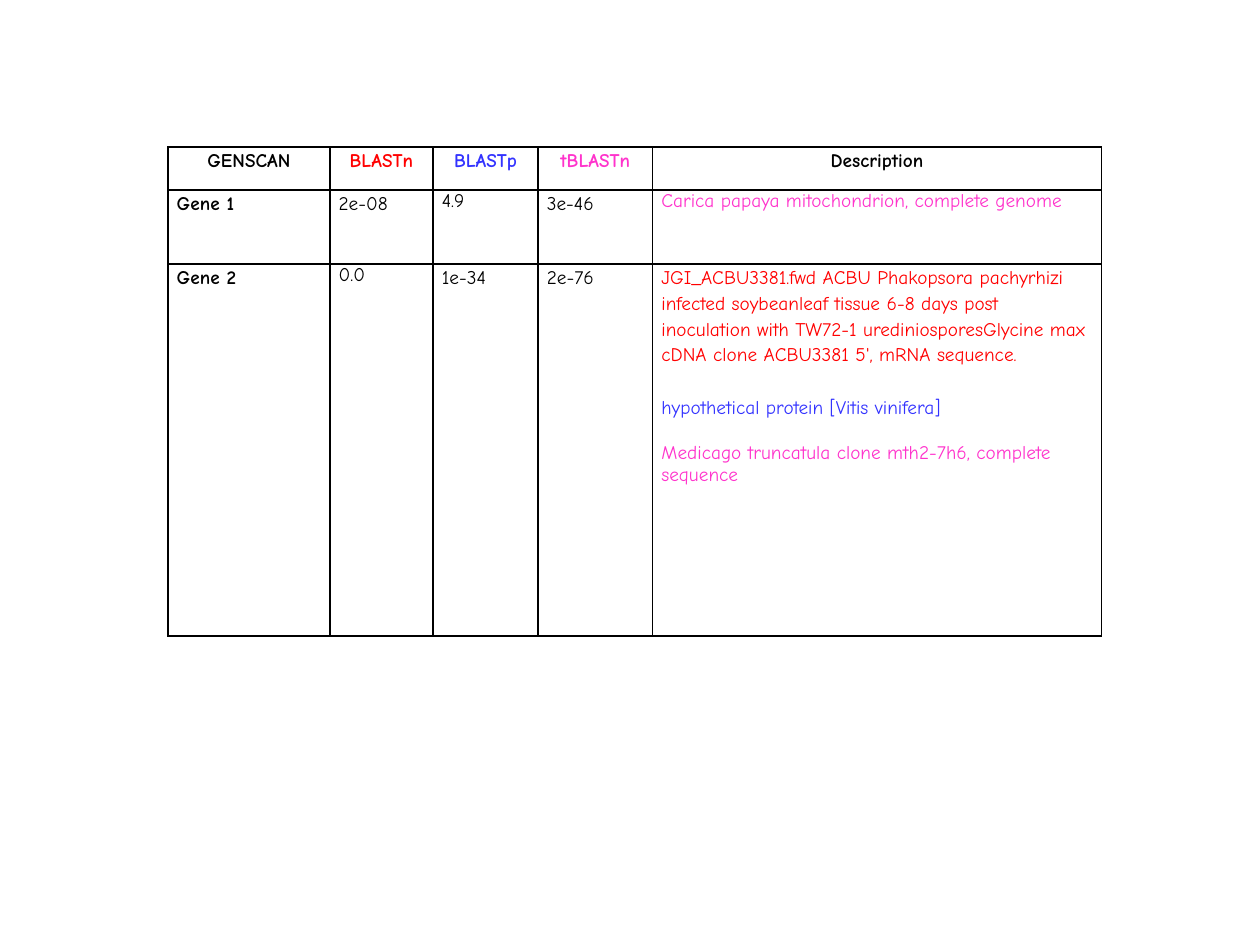
from pptx import Presentation
from pptx.dml.color import RGBColor
from pptx.enum import text as t
from pptx.oxml import parse_xml
from pptx.oxml import ns
from pptx.util import Pt

BLACK = RGBColor(0x00, 0x00, 0x00)
RED = RGBColor(0xFF, 0x00, 0x00)
BLUE = RGBColor(0x33, 0x33, 0xFF)
PINK = RGBColor(0xFF, 0x33, 0xCC)
FONT = "Comic Neue"

# Content: each cell is a list of (text, format) paragraphs
LOOSE = 1.15
HEADERS = [("GENSCAN", BLACK), ("BLASTn", RED), ("BLASTp", BLUE),
           ("tBLASTn", PINK), ("Description", BLACK)]
GENE_ROWS = [
    [
        [("Gene 1", dict(bold=True, spacing=LOOSE))],
        [("2e-08", dict(spacing=LOOSE))],
        [("4.9", {})],
        [("3e-46", dict(spacing=LOOSE))],
        [("Carica papaya mitochondrion, complete genome", dict(color=PINK))],
    ],
    [
        [("Gene 2", dict(bold=True, spacing=LOOSE))],
        [("0.0", {})],
        [("1e-34", dict(spacing=LOOSE))],
        [("2e-76", dict(spacing=LOOSE))],
        [
            ("JGI_ACBU3381.fwd ACBU Phakopsora pachyrhizi infected soybeanleaf "
             "tissue 6-8 days post inoculation with TW72-1 "
             "urediniosporesGlycine max cDNA clone ACBU3381 5', mRNA sequence.",
             dict(color=RED, spacing=LOOSE)),
            ("hypothetical protein [Vitis vinifera]",
             dict(color=BLUE, spacing=LOOSE, before=15.5)),
            ("Medicago truncatula clone mth2-7h6, complete sequence",
             dict(color=PINK, before=13)),
        ],
    ],
]
header_row = [
    [(label, dict(color=color, bold=True, spacing=LOOSE, align=t.PP_ALIGN.CENTER))]
    for label, color in HEADERS
]
ROWS = [header_row] + GENE_ROWS

# Table geometry in points
LEFT, TOP = 96, 84
COLUMN_WIDTHS = [92.5, 59, 60, 65.5, 256.5]
ROW_HEIGHTS = [24.5, 42.5, 212.5]


def write_paragraph(paragraph, content, color=BLACK, bold=False, spacing=1.0,
                    before=0, align=t.PP_ALIGN.LEFT):
    paragraph.alignment = align
    paragraph.line_spacing = spacing
    paragraph.space_before = Pt(before)
    run = paragraph.add_run()
    run.text = content
    run.font.name = FONT
    run.font.size = Pt(11)
    run.font.bold = bold
    run.font.color.rgb = color


def add_borders(cell):
    properties = cell._tc.get_or_add_tcPr()
    for index, side in enumerate(("lnL", "lnR", "lnT", "lnB")):
        border = parse_xml(
            f'<a:{side} {ns.nsdecls("a")} w="{Pt(1)}"><a:solidFill>'
            f'<a:srgbClr val="{BLACK}"/></a:solidFill></a:{side}>')
        properties.insert(index, border)


def fill_cell(cell, paragraphs):
    cell.margin_left = cell.margin_right = Pt(5)
    cell.margin_top = cell.margin_bottom = 0
    cell.vertical_anchor = t.MSO_ANCHOR.TOP
    cell.fill.background()
    add_borders(cell)
    frame = cell.text_frame
    for index, (content, style) in enumerate(paragraphs):
        paragraph = frame.add_paragraph() if index else frame.paragraphs[0]
        write_paragraph(paragraph, content, **style)


presentation = Presentation()
presentation.slide_width, presentation.slide_height = Pt(720), Pt(540)
slide = presentation.slides.add_slide(presentation.slide_layouts[6])

# Gene table
table = slide.shapes.add_table(
    len(ROWS), len(HEADERS), Pt(LEFT), Pt(TOP),
    Pt(sum(COLUMN_WIDTHS)), Pt(sum(ROW_HEIGHTS))).table
table.horz_banding = False
for column, width in zip(table.columns, COLUMN_WIDTHS):
    column.width = Pt(width)
for row, height, cells in zip(table.rows, ROW_HEIGHTS, ROWS):
    row.height = Pt(height)
    for cell, paragraphs in zip(row.cells, cells):
        fill_cell(cell, paragraphs)

presentation.save("out.pptx")
